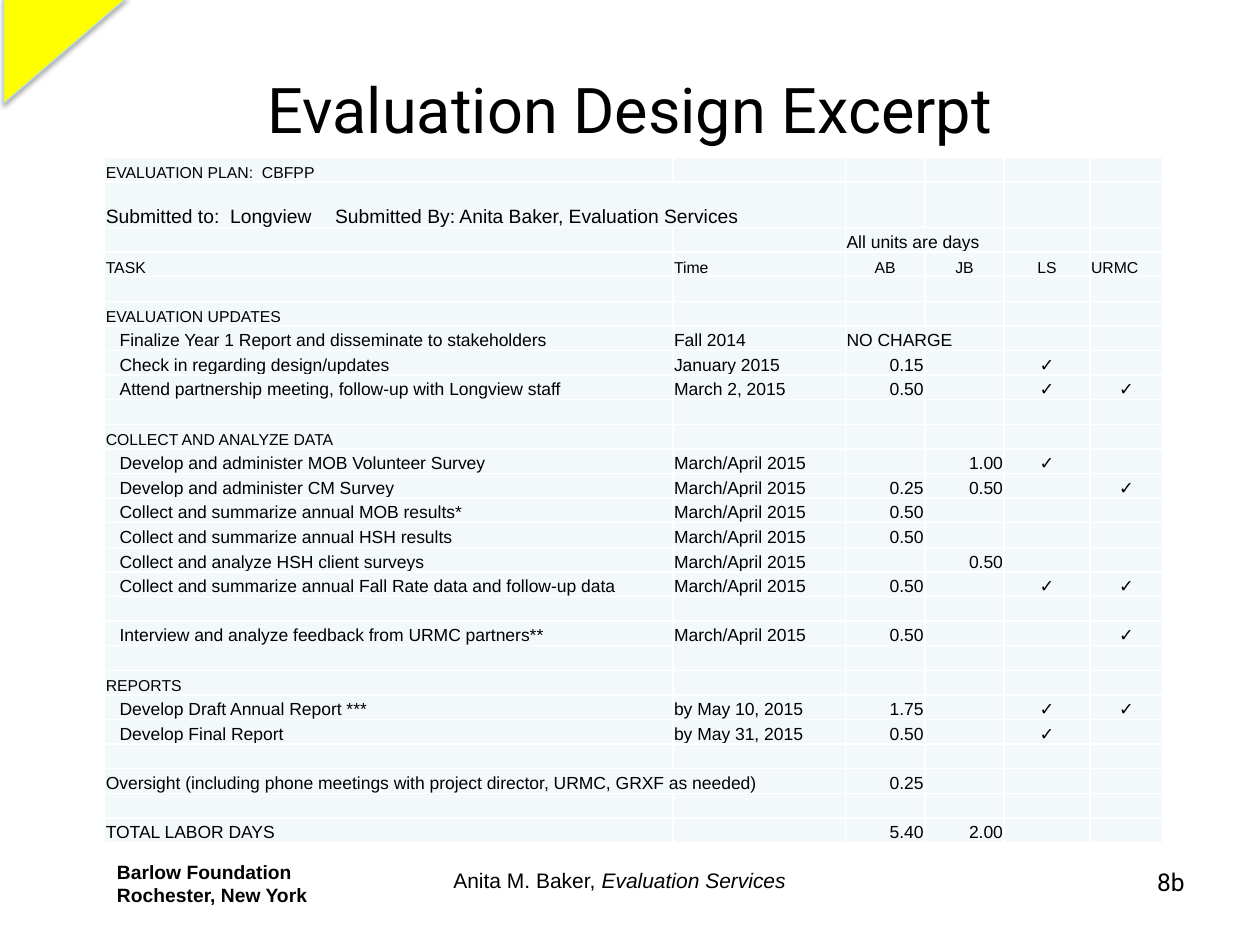
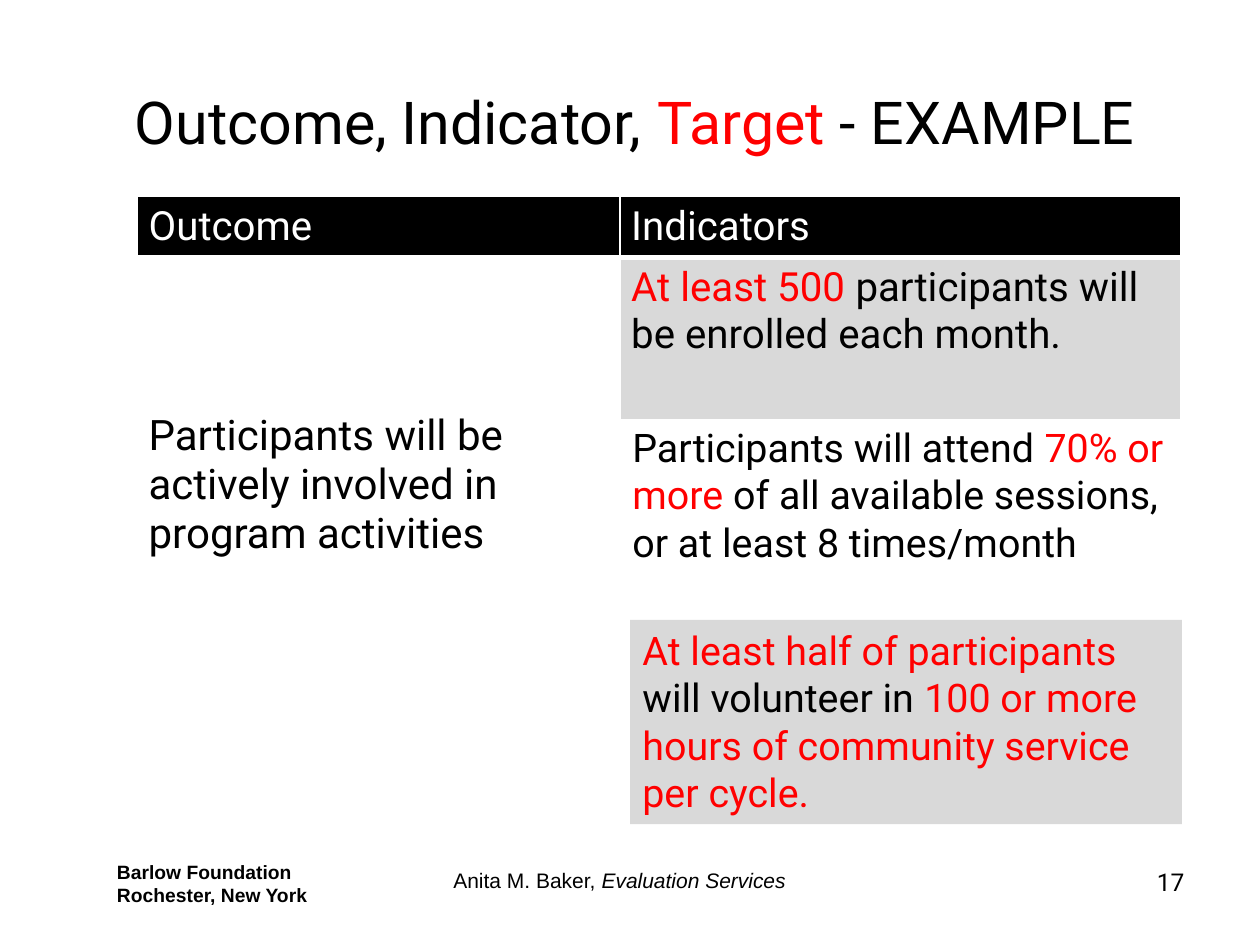
from dataclasses import dataclass

from lxml.etree import SubElement
from pptx import Presentation
from pptx.dml.color import RGBColor
from pptx.enum.shapes import MSO_SHAPE
from pptx.enum.text import MSO_ANCHOR, PP_ALIGN
from pptx.oxml.ns import qn
from pptx.util import Inches, Pt


@dataclass(frozen=True)
class Theme:
    black: str = "000000"
    white: str = "FFFFFF"
    red: str = "FF0000"
    grey: str = "D9D9D9"
    plan_fill: str = "F3F9FA"
    yellow: str = "FFFF00"
    corner_line: str = "B6DCDF"
    head_font: str = "Roboto"
    body_font: str = "Arial"
    title: float = 36
    example_title: float = 33.8
    outcome: float = 24
    table_text: float = 23
    indicator: float = 22.5
    page_number: float = 14
    credit: float = 12
    owner: float = 11
    cover: float = 11
    item: float = 10
    section: float = 9


THEME = Theme()
LEFT, CENTER, RIGHT = PP_ALIGN.LEFT, PP_ALIGN.CENTER, PP_ALIGN.RIGHT
BOX_MARGINS = (0.1, 0.05, 0.1, 0.05)
CELL_MARGINS = (0.09, 0.05, 0.09, 0.05)
PLAN_MARGINS = (0.01, 0.01, 0.01, 0)

# Work plan: kind of row, then task, time, AB, JB, LS, URMC
PLAN_COLUMNS = [4.51, 1.37, 0.63, 0.63, 0.68, 0.58]
PLAN_HEIGHT, COVER_HEIGHT = 5.44, 0.36
SPRING = "March/April 2015"
TICK = "✓"
BLANK = ("section",)
PLAN_ROWS = [
    ("section", "EVALUATION PLAN:  CBFPP"),
    ("cover", "Submitted to:  Longview\tSubmitted By: Anita Baker, Evaluation Services"),
    ("note", "", "", "All units are days"),
    ("section", "TASK", "Time", "AB", "JB", "LS", "URMC"),
    BLANK,
    ("section", "EVALUATION UPDATES"),
    ("item", "Finalize Year 1 Report and disseminate to stakeholders", "Fall 2014", "NO CHARGE"),
    ("item", "Check in regarding design/updates", "January 2015", "0.15", "", TICK),
    ("item", "Attend partnership meeting, follow-up with Longview staff", "March 2, 2015",
     "0.50", "", TICK, TICK),
    BLANK,
    ("section", "COLLECT AND ANALYZE DATA"),
    ("item", "Develop and administer MOB Volunteer Survey", SPRING, "", "1.00", TICK),
    ("item", "Develop and administer CM Survey", SPRING, "0.25", "0.50", "", TICK),
    ("item", "Collect and summarize annual MOB results*", SPRING, "0.50"),
    ("item", "Collect and summarize annual HSH results", SPRING, "0.50"),
    ("item", "Collect and analyze HSH client surveys", SPRING, "", "0.50"),
    ("item", "Collect and summarize annual Fall Rate data and follow-up data", SPRING,
     "0.50", "", TICK, TICK),
    BLANK,
    ("item", "Interview and analyze feedback from URMC partners**", SPRING, "0.50", "", "", TICK),
    BLANK,
    ("section", "REPORTS"),
    ("item", "Develop Draft Annual Report ***", "by May 10, 2015", "1.75", "", TICK, TICK),
    ("item", "Develop Final Report", "by May 31, 2015", "0.50", "", TICK),
    BLANK,
    ("note", "Oversight (including phone meetings with project director, URMC, GRXF as needed)",
     "", "0.25"),
    BLANK,
    ("note", "TOTAL LABOR DAYS", "", "5.40", "2.00"),
]
PLAN_SPANS = [(1, 0), (2, 2), (6, 2), (24, 0)]  # row and first of two merged columns


def color(value):
    return RGBColor.from_string(value)


def set_values(target, values):
    for name, value in values.items():
        setattr(target, name, value)


def set_margins(holder, margins):
    sides = ("margin_left", "margin_top", "margin_right", "margin_bottom")
    set_values(holder, {side: Inches(size) for side, size in zip(sides, margins)})


def write(para, spans, size, font=THEME.head_font, align=LEFT, **extra):
    """Fill a paragraph with spans of (text, colour, further font values)."""
    para.alignment = align
    for text, tint, *more in spans:
        span = para.add_run()
        span.text = text
        span.font.color.rgb = color(tint)
        values = {"size": Pt(size), "name": font, **extra}
        for item in more:
            values.update(item)
        set_values(span.font, values)


def paint(shape, fill):
    shape.fill.solid()
    shape.fill.fore_color.rgb = color(fill)


def add_text(page, at, lines, size, anchor=MSO_ANCHOR.TOP, fill=None, **style):
    place = [Inches(length) for length in at]
    if fill:
        box = page.shapes.add_shape(MSO_SHAPE.RECTANGLE, *place)
        box.shadow.inherit = False
        box.line.fill.background()
        paint(box, fill)
    else:
        box = page.shapes.add_textbox(*place)
    frame = box.text_frame
    set_values(frame, {"word_wrap": True, "vertical_anchor": anchor})
    set_margins(frame, BOX_MARGINS)
    for index, spans in enumerate(lines):
        para = frame.add_paragraph() if index else frame.paragraphs[0]
        write(para, spans, size, **style)


def add_title(page, at, spans, size):
    add_text(page, at, [spans], size, anchor=MSO_ANCHOR.MIDDLE, align=CENTER)


def add_footer(page, number):
    owner = ["Barlow Foundation", "Rochester, New York"]
    add_text(page, (0.83, 6.78, 2.08, 0.47), [[(line, THEME.black)] for line in owner],
             THEME.owner, font=THEME.body_font, bold=True)
    credit = [("Anita M. Baker, ", THEME.black),
              ("Evaluation Services", THEME.black, {"italic": True})]
    add_text(page, (3.5, 6.84, 3, 0.57), [credit], THEME.credit, font=THEME.body_font)
    add_text(page, (7.17, 6.83, 2.33, 0.52), [[(number, THEME.black)]],
             THEME.page_number, align=RIGHT)


def add_grid(page, left, top, columns, rows):
    """Add an unstyled table with the given column widths and row heights."""
    frame = page.shapes.add_table(len(rows), len(columns), Inches(left), Inches(top),
                                  Inches(sum(columns)), Inches(sum(rows)))
    table = frame.table
    set_values(table, {"first_row": False, "horz_banding": False})
    for column, width in zip(table.columns, columns):
        column.width = Inches(width)
    for row, height in zip(table.rows, rows):
        row.height = Inches(height)
    return table


def format_cell(cell, fill, margins=CELL_MARGINS, anchor=MSO_ANCHOR.TOP, bottom=1):
    set_margins(cell, margins)
    cell.vertical_anchor = anchor
    properties = cell._tc.get_or_add_tcPr()
    for side, width in {"L": 1, "R": 1, "T": 1, "B": bottom}.items():
        line = SubElement(properties, qn(f"a:ln{side}"), w=str(Pt(width)))
        SubElement(SubElement(line, qn("a:solidFill")), qn("a:srgbClr"), val=THEME.white)
    if fill:
        paint(cell, fill)
    else:
        cell.fill.background()


def plan_alignment(text):
    if text in (TICK, "AB", "JB", "LS"):
        return CENTER
    return RIGHT if text.replace(".", "").isdigit() else LEFT


def add_plan(page):
    row_height = (PLAN_HEIGHT - COVER_HEIGHT) / (len(PLAN_ROWS) - 1)
    heights = [COVER_HEIGHT if row[0] == "cover" else row_height for row in PLAN_ROWS]
    table = add_grid(page, 0.83, 1.25, PLAN_COLUMNS, heights)
    sizes = {"section": THEME.section, "cover": THEME.cover,
             "item": THEME.item, "note": THEME.item}
    for row, (kind, *texts) in enumerate(PLAN_ROWS):
        for column in range(len(PLAN_COLUMNS)):
            cell = table.cell(row, column)
            format_cell(cell, THEME.plan_fill, PLAN_MARGINS, MSO_ANCHOR.BOTTOM)
            para = cell.text_frame.paragraphs[0]
            text = texts[column] if column < len(texts) else ""
            if not text:
                # Small empty cells keep the row at its height
                SubElement(para._p, qn("a:endParaRPr"), sz=str(THEME.section * 100))
                continue
            layout = para._p.get_or_add_pPr()
            if kind == "item" and column == 0:
                layout.set("marL", str(Inches(0.11)))
            if kind == "cover":
                stops = SubElement(layout, qn("a:tabLst"))
                SubElement(stops, qn("a:tab"), pos=str(Inches(1.82)), algn="l")
            write(para, [(text, THEME.black)], sizes[kind], THEME.body_font,
                  plan_alignment(text))
    for row, column in PLAN_SPANS:
        table.cell(row, column).merge(table.cell(row, column + 1))


def add_corner(page):
    corner = page.shapes.add_shape(MSO_SHAPE.RIGHT_TRIANGLE, Inches(0.1), Inches(-0.09),
                                   Inches(0.84), Inches(0.98))
    corner.rotation = 90
    paint(corner, THEME.yellow)
    corner.line.color.rgb = color(THEME.corner_line)
    corner.line.width = Pt(0.75)
    # Soft shadow straight below
    corner.shadow.inherit = False
    effects = corner._element.spPr.find(qn("a:effectLst"))
    shadow = SubElement(effects, qn("a:outerShdw"), blurRad=str(Pt(3.1)),
                        dist=str(Pt(1.8)), dir=str(90 * 60000), rotWithShape="0")
    tint = SubElement(shadow, qn("a:srgbClr"), val=THEME.black)
    SubElement(tint, qn("a:alpha"), val="35000")


def add_example_table(page, left, width, heights, heading):
    table = add_grid(page, left, 1.56, [width], heights)
    head = table.cell(0, 0)
    format_cell(head, THEME.black, bottom=3)
    write(head.text_frame.paragraphs[0], [(heading, THEME.white)], THEME.table_text)
    return table


def build_plan_page(page):
    add_title(page, (0.5, 0.3, 9, 1.12), [("Evaluation Design Excerpt", THEME.black)],
              THEME.title)
    add_footer(page, "8b")
    add_plan(page)
    add_corner(page)


def build_example_page(page):
    black, red = THEME.black, THEME.red
    add_title(page, (0.86, 0.33, 8.36, 1.25),
              [("Outcome, Indicator, ", black), ("Target", red), (" - EXAMPLE", black)],
              THEME.example_title)

    # Outcome column
    outcomes = add_example_table(page, 1.09, 3.83, [0.47, 2.54, 1.91], "Outcome")
    outcome = outcomes.cell(1, 0)
    format_cell(outcome, None, (0.09, 1.22, 0.09, 0.05))
    write(outcome.text_frame.paragraphs[0],
          [("Participants will be actively involved in program activities", black)],
          THEME.outcome)
    format_cell(outcomes.cell(2, 0), THEME.white)

    # Indicators column
    indicators = add_example_table(page, 4.92, 4.45, [0.47, 1.29], "Indicators")
    enrolled = indicators.cell(1, 0)
    format_cell(enrolled, THEME.grey)
    write(enrolled.text_frame.paragraphs[0],
          [("At least 500 ", red), ("participants will be enrolled each month.", black)],
          THEME.table_text)
    attendance = [("Participants will attend ", black), ("70% or more ", red),
                  ("of all available sessions, or at least 8 times/month", black)]
    add_text(page, (4.92, 3.31, 4.45, 1.62), [attendance], THEME.indicator)
    service = [("At least half of participants", red), (" will volunteer in ", black),
               ("100 or more hours of community service per cycle.", red)]
    add_text(page, (5, 4.92, 4.38, 1.62), [service], THEME.indicator, fill=THEME.grey)
    add_footer(page, "17")


def main():
    deck = Presentation()
    set_values(deck, {"slide_width": Inches(10), "slide_height": Inches(7.5)})
    for build in (build_plan_page, build_example_page):
        build(deck.slides.add_slide(deck.slide_layouts[6]))
    deck.save("out.pptx")


if __name__ == "__main__":
    main()
